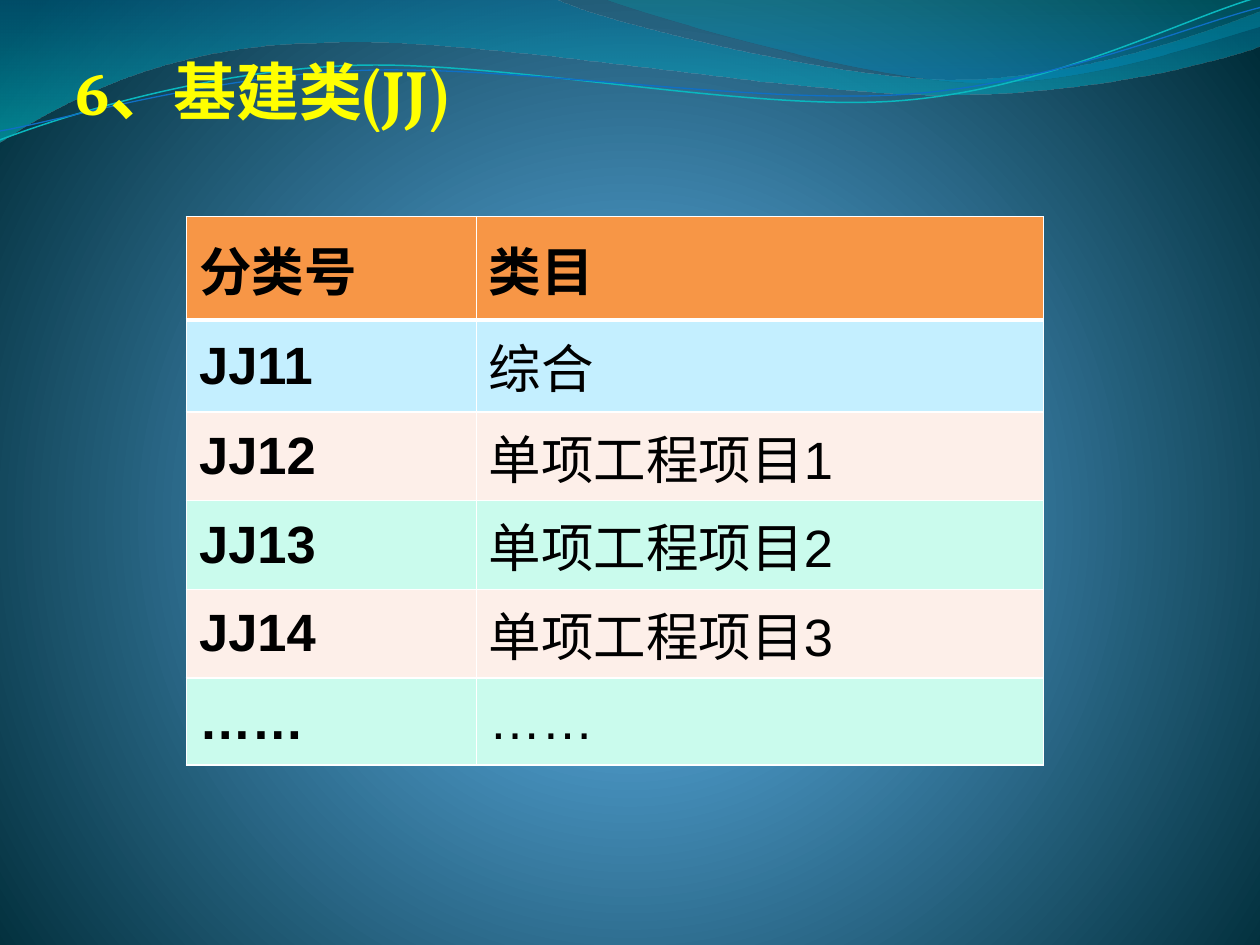
import math

import pptx
import pptx.dml.color
import pptx.enum.text
import pptx.oxml
import pptx.oxml.ns
import pptx.util
from pptx.util import Inches

qn = pptx.oxml.ns.qn
NAMESPACE = pptx.oxml.ns.nsdecls("a")


def color(value):
    return pptx.dml.color.RGBColor.from_string(value)


def write(frame, text, size, font, ink, bold=False, east_asian="Noto Sans CJK SC"):
    """Set the text of a frame as one formatted run."""
    run = frame.paragraphs[0].add_run()
    run.text = text
    run.font.size = pptx.util.Pt(size)
    run.font.name = font
    run.font.bold = bold
    run.font.color.rgb = color(ink)
    run.font._element.find(qn("a:latin")).addnext(
        pptx.oxml.parse_xml(f'<a:ea {NAMESPACE} typeface="{east_asian}"/>'))


def set_gradient(properties, stops, direction):
    """Replace the solid fill in properties; stops are (percent, colour, opacity)."""
    marks = "".join(
        f'<a:gs pos="{at * 1000}"><a:srgbClr val="{value}">'
        f'<a:alpha val="{opacity * 1000}"/></a:srgbClr></a:gs>'
        for at, value, opacity in stops)
    gradient = pptx.oxml.parse_xml(
        f'<a:gradFill {NAMESPACE} rotWithShape="1">'
        f'<a:gsLst>{marks}</a:gsLst>{direction}</a:gradFill>')
    properties.replace(properties.find(qn("a:solidFill")), gradient)


def turn(point, center, degrees):
    """Turn a point clockwise about a center."""
    angle = math.radians(degrees)
    dx, dy = point[0] - center[0], point[1] - center[1]
    return (center[0] + dx * math.cos(angle) - dy * math.sin(angle),
            center[1] + dx * math.sin(angle) + dy * math.cos(angle))


class Deck:
    latin = "Arial"
    heading_font = "Vollkorn"
    ink = "000000"
    heading_ink = "FFFF00"
    border = "FFFFFF"
    table_size = 30
    ripple_center = (4.99, 0.58)
    ripple_tilt = -2.7

    def __init__(self, presentation):
        self.slide = presentation.slides.add_slide(presentation.slide_layouts[5])

    def background(self, stops, direction):
        self.slide.background.fill.solid()
        set_gradient(self.slide.element.find(".//" + qn("p:bgPr")), stops, direction)

    def outline(self, start, segments, closed):
        """Draw segments of one point (straight) or three points (curved)."""
        points = [(Inches(x), Inches(y)) for x, y in [start, *sum(segments, [])]]
        builder = self.slide.shapes.build_freeform(*points[0])
        builder.add_line_segments(points[1:], close=closed)
        shape = builder.convert_to_shape()
        shape.shadow.inherit = False
        # Merge the three steps of each curve into one Bezier command
        steps = iter(shape.element.findall(".//" + qn("a:lnTo")))
        for segment in segments:
            parts = [next(steps) for _ in segment]
            if len(parts) == 3:
                curve = pptx.oxml.parse_xml(f"<a:cubicBezTo {NAMESPACE}/>")
                parts[0].addprevious(curve)
                for part in parts:
                    curve.append(part[0])
                    part.getparent().remove(part)
        return shape

    def wave(self, start, segments, stops):
        shape = self.outline(start, segments, True)
        shape.line.fill.background()
        shape.fill.solid()
        set_gradient(shape.element.spPr, stops, '<a:lin ang="5400000" scaled="1"/>')

    def ripple(self, start, segments, ink, width):
        def level(point):
            return turn(point, self.ripple_center, -self.ripple_tilt)

        shape = self.outline(
            level(start), [[level(point) for point in s] for s in segments], False)
        shape.rotation = self.ripple_tilt
        shape.fill.background()
        shape.line.color.rgb = color(ink)
        shape.line.width = pptx.util.Pt(width)

    def title(self, text, left, top, width, height):
        title = self.slide.shapes.title
        title.left, title.top = Inches(left), Inches(top)
        title.width, title.height = Inches(width), Inches(height)
        frame = title.text_frame
        frame.word_wrap = True
        frame.auto_size = pptx.enum.text.MSO_AUTO_SIZE.NONE
        frame.vertical_anchor = pptx.enum.text.MSO_ANCHOR.TOP
        frame.margin_top = Inches(0.51)
        frame.paragraphs[0].alignment = pptx.enum.text.PP_ALIGN.LEFT
        write(frame, text, 36, self.heading_font, self.heading_ink, bold=True)
        # Bring the title in front of the waves
        self.slide.shapes._spTree.append(title.element)

    def cell(self, cell, text, fill, bold, top, bottom):
        cell.vertical_anchor = pptx.enum.text.MSO_ANCHOR.MIDDLE
        write(cell.text_frame, text, self.table_size, self.latin, self.ink, bold)
        cell.fill.solid()
        cell.fill.fore_color.rgb = color(fill)
        properties = cell._tc.get_or_add_tcPr()
        for index, (side, width) in enumerate(
                (("L", 1), ("R", 1), ("T", top), ("B", bottom))):
            properties.insert(index, pptx.oxml.parse_xml(
                f'<a:ln{side} {NAMESPACE} w="{pptx.util.Pt(width)}">'
                f'<a:solidFill><a:srgbClr val="{self.border}"/></a:solidFill></a:ln{side}>'))

    def table(self, rows, fills, left, top, widths, heights):
        table = self.slide.shapes.add_table(
            len(rows), len(widths), Inches(left), Inches(top),
            Inches(sum(widths)), Inches(sum(heights))).table
        for column, width in zip(table.columns, widths):
            column.width = Inches(width)
        for r, (texts, fill) in enumerate(zip(rows, fills)):
            table.rows[r].height = Inches(heights[r])
            for c, text in enumerate(texts):
                self.cell(table.cell(r, c), text, fill, bold=r == 0 or c == 0,
                          top=3 if r == 1 else 1, bottom=3 if r == 0 else 1)


def main():
    presentation = pptx.Presentation()
    presentation.slide_width, presentation.slide_height = Inches(10), Inches(7.5)
    deck = Deck(presentation)

    # Background glow
    deck.background(
        [(0, "4AA0D6", 100), (25, "4C98C7", 100), (100, "002C38", 100)],
        '<a:path path="circle"><a:fillToRect l="10000" t="110000" r="10000" b="100000"/></a:path>')

    # Waves along the top edge
    deck.wave(
        (0, -0.01),
        [[(4.4, -0.01)],
         [(4.76, 0.17), (6.64, 0.63), (7.58, 0.63)],
         [(8.53, 0.63), (9.58, 0.26), (10, 0.09)],
         [(10.01, 0.36)],
         [(9.83, 0.44), (8.7, 0.76), (7.46, 0.75)],
         [(6.22, 0.75), (3.82, 0.28), (2.57, 0.34)],
         [(1.29, 0.35), (0.46, 0.83), (-0.01, 1.13)]],
        [(0, "0074A1", 45), (100, "00C6CF", 55)])
    deck.wave(
        (4.79, -0.01),
        [[(5.09, 0.11), (6.82, 0.62), (7.69, 0.65)],
         [(8.56, 0.69), (9.61, 0.32), (10, 0.21)],
         [(10, 0)]],
        [(0, "00A1A9", 30), (80, "008BBF", 45)])
    deck.ripple(
        (0, 1.11),
        [[(0.48, 0.93), (1.58, 0.57), (2.77, 0.52)],
         [(3.95, 0.47), (5.93, 0.89), (7.13, 0.8)],
         [(8.33, 0.71), (9.38, 0.15), (9.98, -0.02)]],
        "0AB8BF", 0.85)
    deck.ripple(
        (0, 1.04),
        [[(0.47, 0.96), (1.64, 0.61), (2.83, 0.56)],
         [(4.03, 0.51), (5.97, 0.83), (7.17, 0.75)],
         [(8.36, 0.67), (9.41, 0.21), (10, 0.06)]],
        "0F6FC6", 0.75)

    # Title
    deck.title("6、基建类(JJ)", 0.5, -0.09, 9.3, 1.34)

    # Classification table
    categories = [("分类号", "类目"), ("JJ11", "综合")]
    categories += [(f"JJ{11 + n}", f"单项工程项目{n}") for n in (1, 2, 3)]
    categories.append(("……", "……"))
    fills = ["F79646", "C4EFFF"] + ["FDEFE9", "CAFBED"] * 2
    deck.table(categories, fills, 1.48, 1.72, [2.3, 4.5], [0.82, 0.73] + [0.69] * 4)

    presentation.save("out.pptx")


if __name__ == "__main__":
    main()
